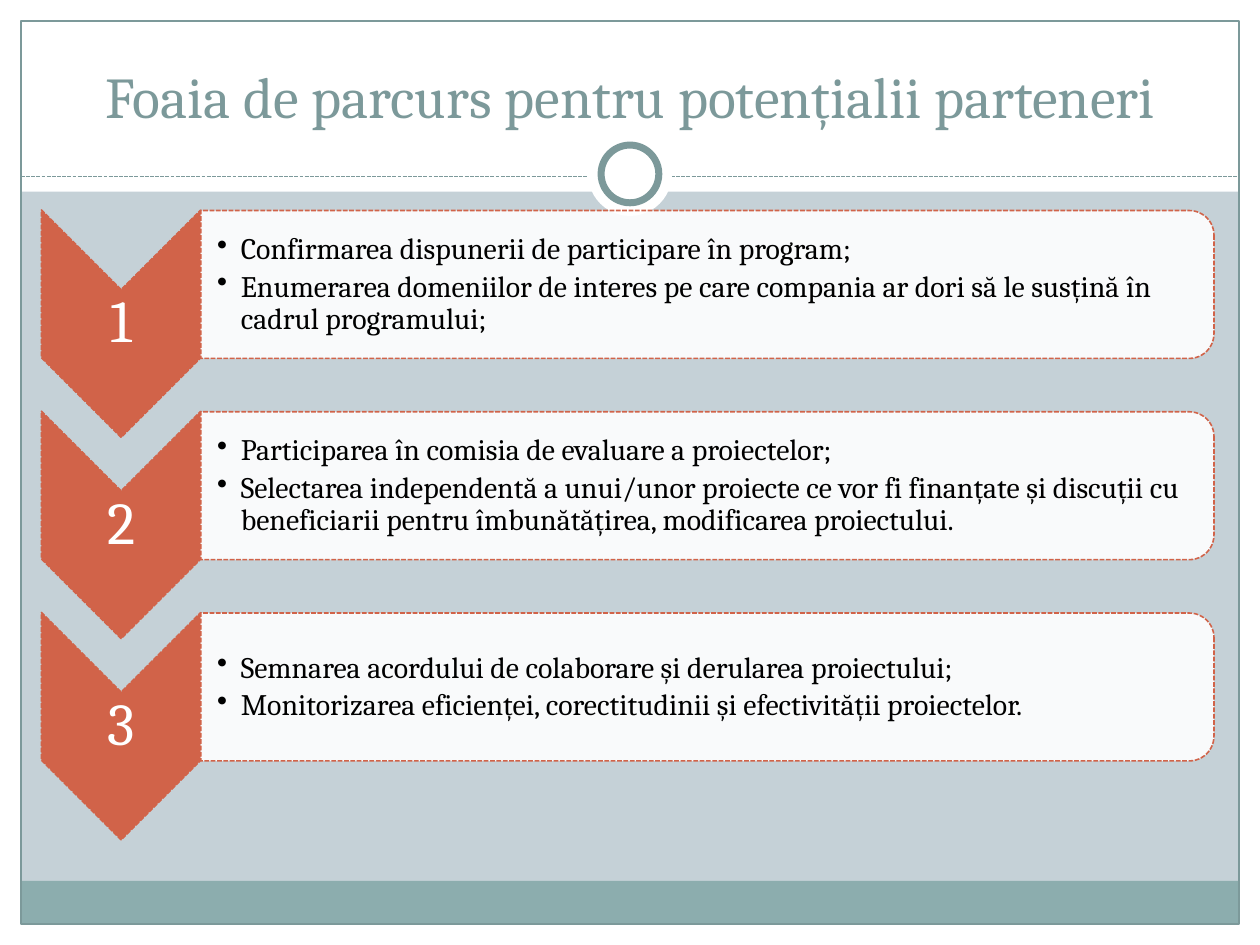
import dataclasses
import lxml.etree
import pptx
import pptx.dml.color
import pptx.enum.dml
import pptx.enum.shapes
import pptx.enum.text
import pptx.oxml.ns
import pptx.util

Pt = pptx.util.Pt
Shape = pptx.enum.shapes.MSO_SHAPE
Align = pptx.enum.text.PP_ALIGN
Anchor = pptx.enum.text.MSO_ANCHOR
DASH = pptx.enum.dml.MSO_LINE.SQUARE_DOT
qn = pptx.oxml.ns.qn


@dataclasses.dataclass(frozen=True)
class Theme:
    """Colours, font and type sizes of the slide."""
    back: str = "C5D1D7"
    white: str = "FFFFFF"
    band: str = "8CADAE"
    teal: str = "7C999A"
    rust: str = "D16349"
    ink: str = "000000"
    font: str = "Cambria"
    head: float = 33
    digit: float = 34
    body: float = 17


THEME = Theme()

STEPS = [
    ["Confirmarea dispunerii de participare în program;",
     "Enumerarea domeniilor de interes pe care compania ar dori să le susțină în cadrul programului;"],
    ["Participarea în comisia de evaluare a proiectelor;",
     "Selectarea independentă a unui/unor proiecte ce vor fi finanțate și discuții cu "
     "beneficiarii pentru îmbunătățirea, modificarea proiectului."],
    ["Semnarea acordului de colaborare și derularea proiectului;",
     "Monitorizarea eficienței, corectitudinii și efectivității proiectelor."],
]


def paint(color):
    """Turn a hex string into a colour."""
    return pptx.dml.color.RGBColor.from_string(color)


def apply(item, values):
    """Set each named value on an object."""
    for name, value in values.items():
        setattr(item, name, value)


def stroke(line, color, width, dash=None):
    """Style an outline or a connector's line."""
    line.color.rgb = paint(color)
    apply(line, {"width": Pt(width), "dash_style": dash})


def draw(slide, kind, box, fill=None, line=None, turned=False):
    """Add a shape that fills a box, turned by a quarter if asked."""
    x, y, w, h = box
    if turned:
        x, y, w, h = x + (w - h) / 2, y + (h - w) / 2, h, w
    shape = slide.shapes.add_shape(kind, Pt(x), Pt(y), Pt(w), Pt(h))
    shape.shadow.inherit = False
    shape.rotation = 90 if turned else 0
    if fill:
        shape.fill.solid()
        shape.fill.fore_color.rgb = paint(fill)
    else:
        shape.fill.background()
    if line:
        stroke(shape.line, *line)
    else:
        shape.line.fill.background()
    return shape


def write(slide, box, texts, size, color, pads, para, anchor=Anchor.MIDDLE, bullet=False):
    """Add a text box with one paragraph for each text."""
    frame = slide.shapes.add_textbox(*map(Pt, box)).text_frame
    sides = ("margin_left", "margin_top", "margin_right", "margin_bottom")
    apply(frame, {"word_wrap": True, "vertical_anchor": anchor, **dict(zip(sides, map(Pt, pads)))})
    for i, text in enumerate(texts):
        item = frame.add_paragraph() if i else frame.paragraphs[0]
        apply(item, para)
        run = item.add_run()
        run.text = text
        apply(run.font, {"name": THEME.font, "size": Pt(size)})
        run.font.color.rgb = paint(color)
        if bullet:
            props = item._p.get_or_add_pPr()
            props.set("marL", str(Pt(13.5)))
            props.set("indent", str(-Pt(13.5)))
            lxml.etree.SubElement(props, qn("a:buChar")).set("char", "•")


def frame(slide, box):
    """Draw the white margins, the foot band and the page outline."""
    x, y, w, h = box
    edge = 12
    for part in [(x, y + h - edge, w, edge), (x, y, w, 109.5),
                 (x, y, edge, h), (x + w - edge, y, edge, h)]:
        draw(slide, Shape.RECTANGLE, part, THEME.white)
    inner = w - 2 * edge
    draw(slide, Shape.RECTANGLE, (x + edge, y + 503.3, inner, 24.7), THEME.band)
    draw(slide, Shape.RECTANGLE, (x + edge, y + edge, inner, h - 2 * edge),
         line=(THEME.teal, 0.75))


def header(slide, box):
    """Draw the dashed rule with its ring and the title."""
    x, y, w, h = box
    rule = slide.shapes.add_connector(pptx.enum.shapes.MSO_CONNECTOR.STRAIGHT,
                                      Pt(x), Pt(y + h), Pt(x + w), Pt(y + h))
    stroke(rule.line, THEME.teal, 0.75, DASH)
    lxml.etree.SubElement(rule._element.spPr, qn("a:effectLst"))
    mid, level = x + w / 2, y + h - 1.4
    for size, line in [(48, None), (33, (THEME.teal, 4))]:
        draw(slide, Shape.OVAL, (mid - size / 2, level - size / 2, size, size), THEME.white, line)
    write(slide, (x + 12, y + 6, w - 24, 60), ["Foaia de parcurs pentru potențialii parteneri"],
          THEME.head, THEME.teal, (7.2, 3.6, 7.2, 3.6), {"alignment": Align.CENTER}, Anchor.BOTTOM)


def step(slide, box, label, texts):
    """Draw one numbered chevron and its panel of bullets."""
    x, y, w, h = box
    tip = 91
    line = (THEME.rust, 0.9, DASH)
    draw(slide, Shape.CHEVRON, (x, y, tip, h), THEME.rust, line, True)
    write(slide, (x, y + tip / 2, tip, h - tip), [label], THEME.digit, THEME.white,
          (1.5,) * 4, {"alignment": Align.CENTER, "line_spacing": 0.9})
    tall = 84.5
    panel = draw(slide, Shape.ROUND_2_SAME_RECTANGLE, (x + tip, y + 0.3, w - tip, tall),
                 THEME.white, line, True)
    tint = panel._element.spPr.find(qn("a:solidFill"))[0]
    lxml.etree.SubElement(tint, qn("a:alpha")).set("val", "90000")
    write(slide, (x + tip, y + 4.5, w - tip - 4, tall - 8), texts, THEME.body, THEME.ink,
          (9.4, 0.8, 0.8, 0.8), {"line_spacing": 0.9, "space_after": Pt(3)}, bullet=True)


def steps(slide, box):
    """Stack the steps at equal gaps down the box."""
    x, y, w, h = box
    tall = 130
    pitch = (h - tall) / (len(STEPS) - 1)
    for i, texts in enumerate(STEPS):
        step(slide, (x, y + i * pitch, w, tall), str(i + 1), texts)


def main():
    """Build the slide and save it."""
    deck = pptx.Presentation()
    apply(deck, {"slide_width": Pt(720), "slide_height": Pt(540)})
    slide = deck.slides.add_slide(deck.slide_layouts[6])
    slide.background.fill.solid()
    slide.background.fill.fore_color.rgb = paint(THEME.back)
    frame(slide, (0, 0, 720, 540))
    header(slide, (12, 12, 696, 88.8))
    steps(slide, (23.7, 120, 670, 360))
    deck.save("out.pptx")


if __name__ == "__main__":
    main()
